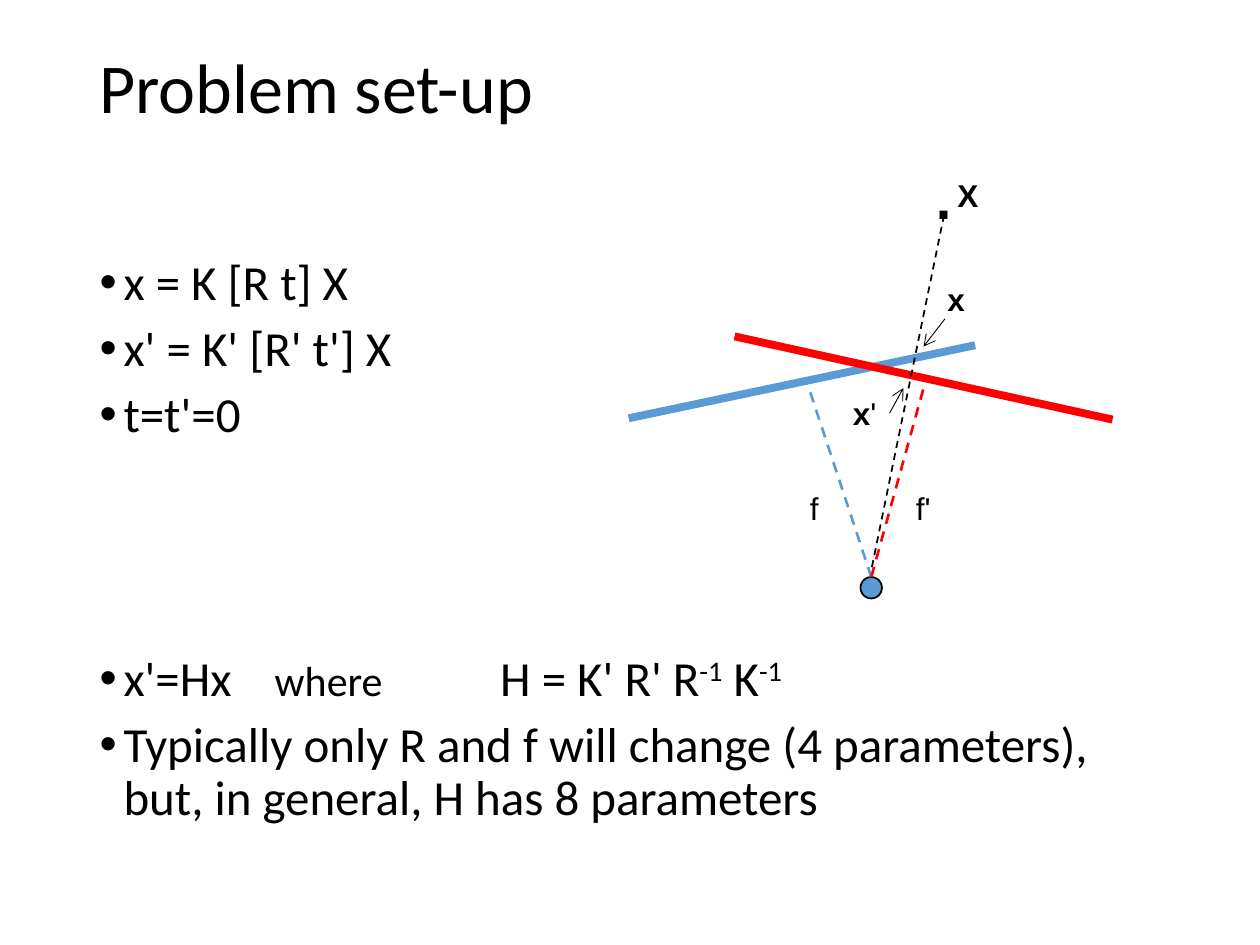
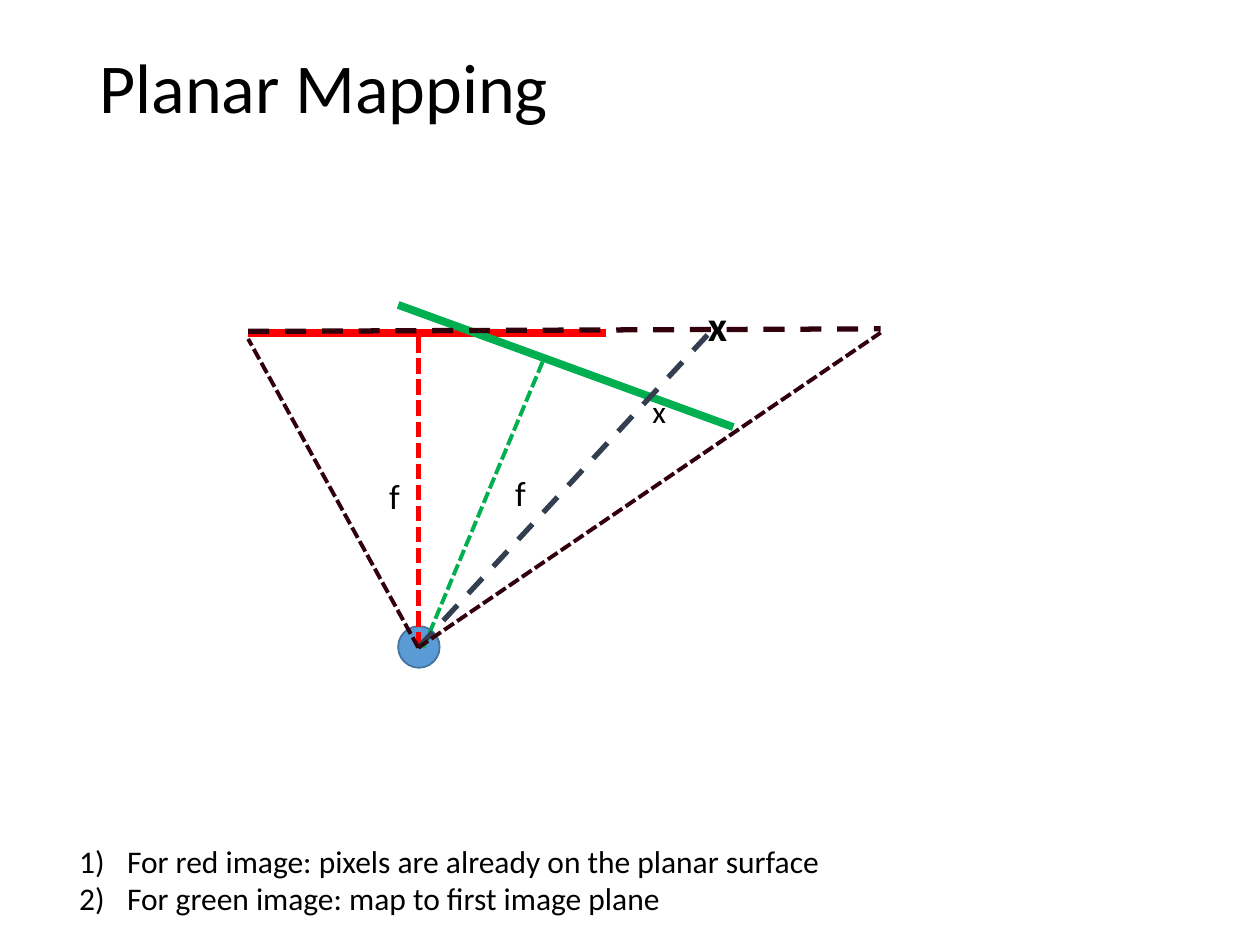
from pptx import Presentation
from pptx.dml.color import RGBColor
from pptx.enum.dml import MSO_LINE
from pptx.enum.shapes import MSO_CONNECTOR, MSO_SHAPE
from pptx.enum.text import MSO_ANCHOR, MSO_AUTO_SIZE, PP_ALIGN
from pptx.oxml.ns import qn
from pptx.util import Inches, Pt
from lxml.etree import SubElement

BLACK, BLUE, RED, GREEN = "000000", "5B9BD5", "FF0000", "00B050"
SLATE, MAROON, BLUE_EDGE = "333F50", "32000C", "43739E"
DASH, DOT = MSO_LINE.DASH, MSO_LINE.SQUARE_DOT
rgb = RGBColor.from_string


def add_line(s, start, end, color, width, dash=None, arrow=False):
    cx = s.shapes.add_connector(MSO_CONNECTOR.STRAIGHT, *map(Inches, start + end))
    cx.line.color.rgb = rgb(color)
    cx.line.width = Pt(width)
    if dash:
        cx.line.dash_style = dash
    if arrow:
        SubElement(cx.line._get_or_add_ln(), qn("a:tailEnd"), type="arrow")
    SubElement(cx._element.spPr, qn("a:effectLst"))
    return cx


def add_runs(p, runs, font):
    """Add (text, size, bold, superscript) runs to a paragraph."""
    for text, size, bold, sup in runs:
        r = p.add_run()
        r.text = text
        r.font.name, r.font.size, r.font.bold = font, Pt(size), bold
        r.font.color.rgb = rgb(BLACK)
        if sup:
            r.font._element.set("baseline", "30000")


prs = Presentation()
prs.slide_width, prs.slide_height = Inches(10), Inches(7.5)

# Shared title style and camera centre
slides, cameras = [], []
for title, layout, (x, y, d), edge in [
    ("Problem set-up", 1, (6.83, 4.58, 0.17), BLACK),
    ("Planar Mapping", 5, (3.16, 4.97, 0.33), BLUE_EDGE),
]:
    s = prs.slides.add_slide(prs.slide_layouts[layout])
    sp = s.shapes.title
    sp.left, sp.top, sp.width, sp.height = map(Inches, (0.69, 0, 8.62, 1.45))
    tf = sp.text_frame
    tf.vertical_anchor = MSO_ANCHOR.MIDDLE
    p = tf.paragraphs[0]
    p.alignment, p.line_spacing = PP_ALIGN.LEFT, 0.9
    add_runs(p, [(title, 40, False, False)], "Calibri")

    camera = s.shapes.add_shape(MSO_SHAPE.OVAL, *map(Inches, (x, y, d, d)))
    camera.shadow.inherit = False
    camera.fill.solid()
    camera.fill.fore_color.rgb = rgb(BLUE)
    camera.line.color.rgb = rgb(edge)
    camera.line.width = Pt(1)
    slides.append(s)
    cameras.append(camera)
setup, mapping = slides

# Problem set-up: equations
sp = setup.placeholders[1]
sp.left, sp.top, sp.width, sp.height = map(Inches, (0.69, 2, 8.62, 4.76))
tf = sp.text_frame
tf.auto_size = MSO_AUTO_SIZE.NONE
homography = [("x'=Hx\t", 28, False, False), ("where", 24, False, False),
              ("\tH = K' R' R", 28, False, False), ("-1", 28, False, True),
              (" K", 28, False, False), ("-1", 28, False, True)]
summary = ("Typically only R and f will change (4 parameters), "
           "but, in general, H has 8 parameters")
for i, (before, runs) in enumerate([
    (0, [("x = K [R t] X", 28, False, False)]),
    (7.5, [("x' = K' [R' t'] X", 28, False, False)]),
    (7.5, [("t=t'=0", 28, False, False)]),
    (120.5, homography),
    (7.5, [(summary, 28, False, False)]),
]):
    p = tf.add_paragraph() if i else tf.paragraphs[0]
    p.line_spacing, p.space_before = 0.9, Pt(before)
    pPr = p._p.get_or_add_pPr()
    pPr.set("marL", str(Inches(0.19)))
    pPr.set("indent", str(-Inches(0.19)))
    SubElement(pPr, qn("a:buFont"), typeface="Arial")
    SubElement(pPr, qn("a:buChar"), char="•")
    if runs is homography:
        tabs = SubElement(pPr, qn("a:tabLst"))
        for stop in (1.39, 3.18):
            SubElement(tabs, qn("a:tab"), pos=str(Inches(stop)), algn="l")
    add_runs(p, runs, "Calibri")

# Problem set-up: image planes, focal lengths, viewing ray, pointers
add_line(setup, (4.99, 3.32), (7.74, 2.74), BLUE, 4.5)
add_line(setup, (5.83, 2.67), (8.83, 3.33), RED, 4.5)
for end, color in [((6.42, 3.08), BLUE), ((7.33, 3.08), RED)]:
    cx = add_line(setup, (6.92, 4.58), end, color, 1.5, DASH)
    cx.begin_connect(cameras[0], 0)
add_line(setup, (6.92, 4.5), (7.5, 1.67), BLACK, 1, DASH)
add_line(setup, (7.06, 3.28), (7.17, 3.08), BLACK, 0.5, arrow=True)
add_line(setup, (7.5, 2.53), (7.33, 2.75), BLACK, 0.5, arrow=True)

# Planar Mapping: image planes, focal lengths, viewing rays, mosaic plane
for start, end, color, width, dash in [
    ((1.97, 2.64), (4.81, 2.64), RED, 4.5, None),
    ((3.16, 2.42), (5.82, 3.39), GREEN, 4.5, None),
    ((3.32, 5.14), (3.32, 2.64), RED, 3, DOT),
    ((3.36, 5.14), (4.32, 2.84), GREEN, 2.25, DOT),
    ((3.32, 5.14), (5.66, 2.61), SLATE, 3, DASH),
    ((1.97, 2.63), (6.99, 2.61), MAROON, 3, DASH),
    ((3.32, 5.14), (6.99, 2.64), MAROON, 2.25, DOT),
    ((3.32, 5.14), (1.97, 2.69), MAROON, 2.25, DOT),
]:
    add_line(mapping, start, end, color, width, dash)

# Labels and numbered notes
notes = ["For red image: pixels are already on the planar surface",
         "For green image: map to first image plane"]
for s, box, lines, size, bold, font in [
    (setup, (6.33, 3.83, 0.27, 0.4), ["f"], 18, False, "Arial"),
    (setup, (7.17, 3.83, 0.32, 0.4), ["f'"], 18, False, "Arial"),
    (setup, (7.33, 1.25, 0.33, 0.64), ["."], 32, True, "Arial"),
    (setup, (7.42, 2.17, 0.34, 0.4), ["x"], 18, True, "Arial"),
    (setup, (6.67, 3.08, 0.39, 0.4), ["x'"], 18, True, "Arial"),
    (setup, (7.5, 1.35, 0.37, 0.4), ["X"], 18, True, "Arial"),
    (mapping, (2.99, 3.72, 0.28, 0.44), ["f"], 20, False, "Calibri"),
    (mapping, (3.99, 3.69, 0.28, 0.44), ["f"], 20, False, "Calibri"),
    (mapping, (5.08, 3.06, 0.33, 0.4), ["x"], 18, False, "Calibri"),
    (mapping, (5.52, 2.33, 0.39, 0.5), ["x"], 24, True, "Calibri"),
    (mapping, (0.53, 6.63, 6.71, 0.71), notes, 18, False, "Calibri"),
]:
    tf = s.shapes.add_textbox(*map(Inches, box)).text_frame
    tf.word_wrap = False
    tf.auto_size = MSO_AUTO_SIZE.SHAPE_TO_FIT_TEXT
    for i, text in enumerate(lines):
        p = tf.add_paragraph() if i else tf.paragraphs[0]
        if lines is notes:
            pPr = p._p.get_or_add_pPr()
            pPr.set("marL", str(Inches(0.38)))
            pPr.set("indent", str(-Inches(0.38)))
            SubElement(pPr, qn("a:buFont"), typeface="+mj-lt")
            SubElement(pPr, qn("a:buAutoNum"), type="arabicParenR")
        # The prime mark stays regular beside a bold letter
        runs = [(text[0], size, bold, False), ("'", size, False, False)] if text == "x'" else [
            (text, size, bold, False)]
        add_runs(p, runs, font)

prs.save("out.pptx")
